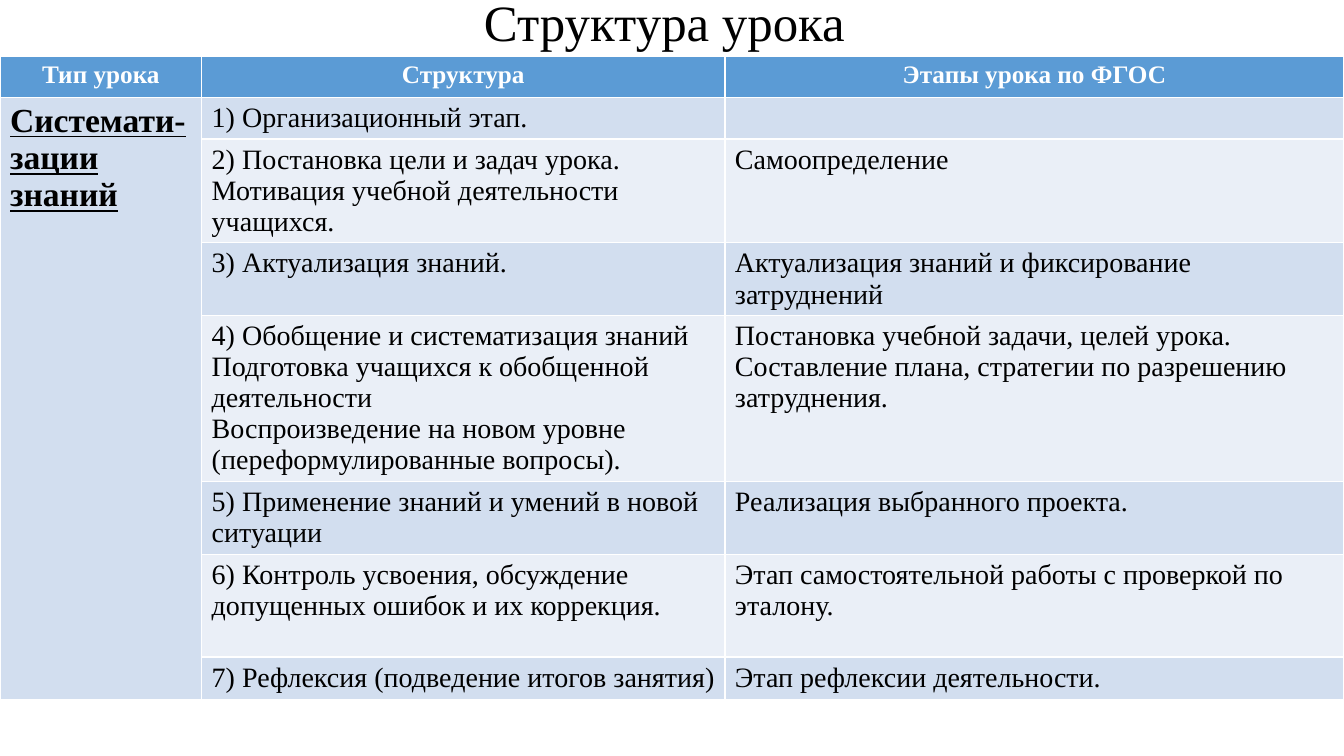
"""Build a slide with a table of lesson stages."""
from pptx import Presentation
from pptx import util as u
from pptx.dml import color
from pptx.enum import text

FONT = "Times New Roman"
HEADER_FILL, ODD_FILL, EVEN_FILL = "5B9BD5", "D2DEEF", "EAEFF7"
WHITE, BLACK = "FFFFFF", "000000"

headings = ["Тип урока", "Структура", "Этапы урока по ФГОС"]
stages = [
    ("1) Организационный этап.", ""),
    ("2) Постановка цели и задач урока. Мотивация учебной деятельности учащихся.",
     "Самоопределение"),
    ("3) Актуализация знаний.", "Актуализация знаний и фиксирование затруднений"),
    ("4) Обобщение и систематизация знаний\n"
     "Подготовка учащихся к обобщенной деятельности\n"
     "Воспроизведение на новом уровне (переформулированные вопросы).",
     "Постановка учебной задачи, целей урока.\n"
     "Составление плана, стратегии по разрешению затруднения."),
    ("5) Применение знаний и умений в новой ситуации", "Реализация выбранного проекта."),
    ("6) Контроль усвоения, обсуждение допущенных ошибок и их коррекция.",
     "Этап самостоятельной работы с проверкой по эталону."),
    ("7) Рефлексия (подведение итогов занятия)", "Этап рефлексии деятельности."),
]
column_widths = [2, 5.19, 6.14]
row_heights = [0.41, 0.41, 1.03, 0.72, 1.65, 0.72, 1.02, 0.42]


def rgb(value):
    return color.RGBColor.from_string(value)


def format_text(frame, size, font_color, bold=False, underline=False, alignment=None):
    for paragraph in frame.paragraphs:
        paragraph.alignment = alignment
        for run in paragraph.runs:
            run.font.name = FONT
            run.font.size = u.Pt(size)
            run.font.bold = bold
            run.font.underline = underline
            run.font.color.rgb = rgb(font_color)


presentation = Presentation()
presentation.slide_width = u.Inches(13.33)
presentation.slide_height = u.Inches(7.5)
slide = presentation.slides.add_slide(presentation.slide_layouts[5])

title = slide.shapes.title
title.left, title.top = u.Inches(0.84), u.Inches(0)
title.width, title.height = u.Inches(11.5), u.Inches(0.56)
title.text_frame.text = "Структура урока"
title.text_frame.auto_size = text.MSO_AUTO_SIZE.NONE
title.text_frame.vertical_anchor = text.MSO_ANCHOR.MIDDLE
title.text_frame.paragraphs[0].line_spacing = 0.7
format_text(title.text_frame, 36.3, BLACK, alignment=text.PP_ALIGN.CENTER)

table = slide.shapes.add_table(
    len(row_heights), len(column_widths), u.Inches(0), u.Inches(0.56),
    u.Inches(sum(column_widths)), u.Inches(sum(row_heights))).table
for column, width in zip(table.columns, column_widths):
    column.width = u.Inches(width)
for row, height in zip(table.rows, row_heights):
    row.height = u.Inches(height)

for cell, heading in zip(table.rows[0].cells, headings):
    cell.text_frame.text = heading
    cell.fill.solid()
    cell.fill.fore_color.rgb = rgb(HEADER_FILL)
    format_text(cell.text_frame, 18, WHITE, bold=True, alignment=text.PP_ALIGN.CENTER)

for row_number, stage in enumerate(stages, start=1):
    lesson_type = "Системати-зации знаний" if row_number == 1 else ""
    for column_number, content in enumerate((lesson_type, *stage)):
        cell = table.cell(row_number, column_number)
        cell.text_frame.text = content
        cell.fill.solid()
        cell.fill.fore_color.rgb = rgb(ODD_FILL if row_number % 2 else EVEN_FILL)
        is_type = column_number == 0
        format_text(cell.text_frame, 24 if is_type else 20, BLACK,
                    bold=is_type, underline=is_type)
table.cell(1, 0).merge(table.cell(len(stages), 0))

presentation.save("out.pptx")
